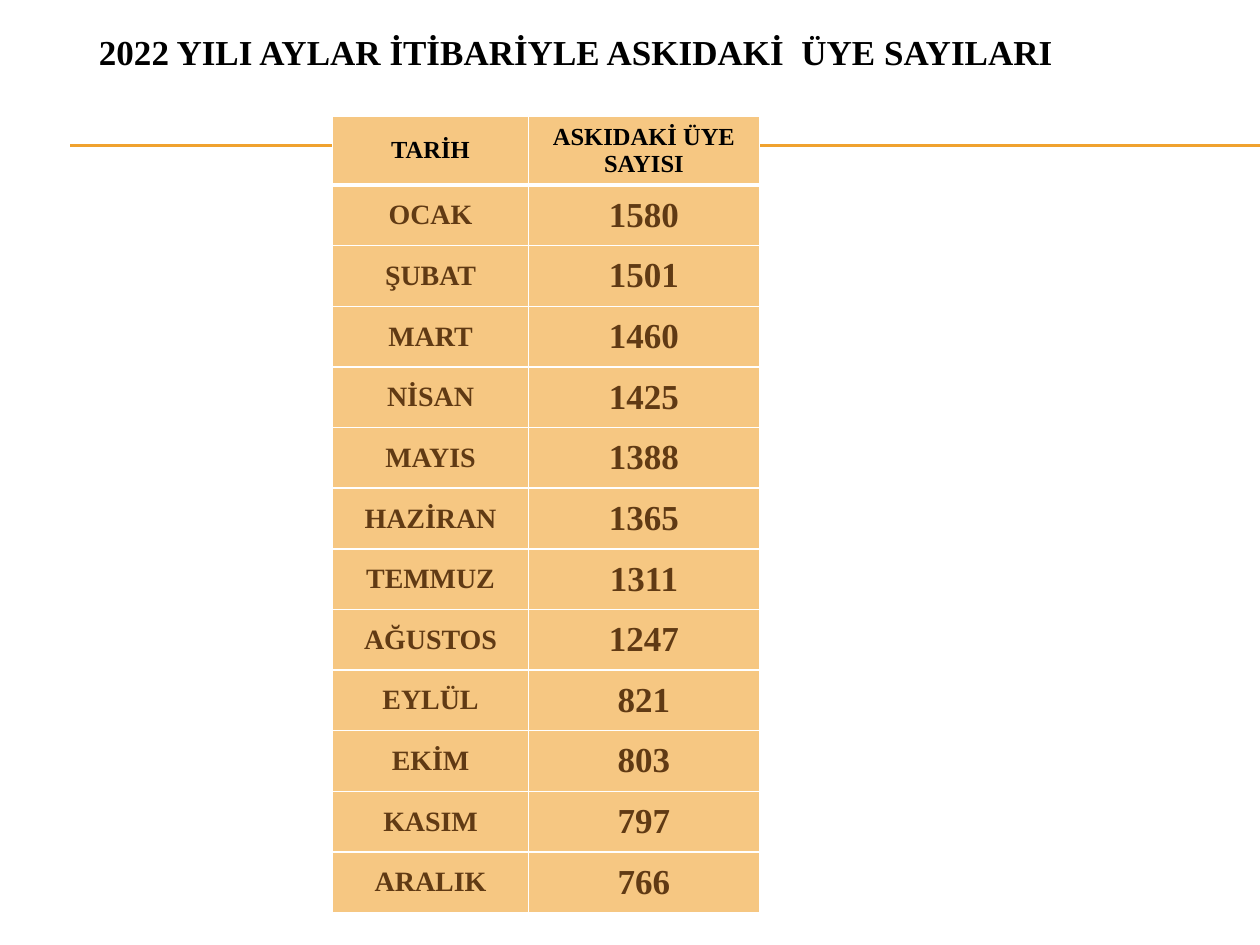
from dataclasses import dataclass
from lxml.etree import SubElement
from pptx import Presentation
from pptx.dml.color import RGBColor as Rgb
from pptx.enum.shapes import MSO_CONNECTOR as Link
from pptx.enum.text import MSO_ANCHOR as Anchor, PP_ALIGN as Align
from pptx.oxml.ns import qn
from pptx.util import Pt

HUES = {"rule": "F0A22E", "cell": "F6C782", "edge": "FFFFFF",
        "head": "000000", "body": "603A14"}
FACE = "Times New Roman"
TITLE = "2022 YILI AYLAR İTİBARİYLE ASKIDAKİ  ÜYE SAYILARI"
HEADS = ("TARİH", "ASKIDAKİ ÜYE SAYISI")
WIDTHS = (111.9, 132)
HEAD_H, ROW_H = 39.6, 34.65


@dataclass
class Month:
    name: str
    count: int


@dataclass
class Rule:
    left: float
    right: float
    top: float


MONTHS = [
    Month("OCAK", 1580), Month("ŞUBAT", 1501), Month("MART", 1460),
    Month("NİSAN", 1425), Month("MAYIS", 1388), Month("HAZİRAN", 1365),
    Month("TEMMUZ", 1311), Month("AĞUSTOS", 1247), Month("EYLÜL", 821),
    Month("EKİM", 803), Month("KASIM", 797), Month("ARALIK", 766),
]
RULES = [Rule(40.3, 720, 82.8), Rule(40.3, 720, 83.5)]


def write(frame, text: str, size: float, hue: str) -> None:
    """Put one centred bold line of text in a frame."""
    para = frame.paragraphs[0]
    para.alignment = Align.CENTER
    run = para.add_run()
    run.text = text
    form = {"name": FACE, "size": Pt(size), "bold": True}
    for key, value in form.items():
        setattr(run.font, key, value)
    run.font.color.rgb = Rgb.from_string(HUES[hue])


def draw_rule(slide, rule: Rule) -> None:
    """Draw a thin level line."""
    line = slide.shapes.add_connector(
        Link.STRAIGHT, Pt(rule.left), Pt(rule.top), Pt(rule.right), Pt(rule.top))
    line.line.width = Pt(0.75)
    line.line.color.rgb = Rgb.from_string(HUES["rule"])
    SubElement(line._element.spPr, qn("a:effectLst"))


def edge(cell, sides: dict[str, float]) -> None:
    """Give a cell its borders, then its fill."""
    props = cell._tc.get_or_add_tcPr()
    for side, width in sides.items():
        line = SubElement(props, qn(f"a:ln{side}"), w=str(Pt(width)))
        fill = SubElement(line, qn("a:solidFill"))
        SubElement(fill, qn("a:srgbClr"), val=HUES["edge"])
    cell.fill.solid()
    cell.fill.fore_color.rgb = Rgb.from_string(HUES["cell"])


def draw_table(slide, months: list[Month]) -> None:
    """Draw the monthly counts below a header row."""
    rows = [HEADS] + [(m.name, str(m.count)) for m in months]
    table = slide.shapes.add_table(
        len(rows), len(WIDTHS), Pt(190.1), Pt(66.2), Pt(sum(WIDTHS)),
        Pt(HEAD_H + ROW_H * len(months))).table
    for col, width in zip(table.columns, WIDTHS):
        col.width = Pt(width)
    for r, texts in enumerate(rows):
        table.rows[r].height = Pt(ROW_H if r else HEAD_H)
        sizes = (16, 20) if r else (14, 14)
        sides = {"L": 1, "R": 1, "T": 3 if r == 1 else 1, "B": 1 if r else 3}
        for c, (text, size) in enumerate(zip(texts, sizes)):
            cell = table.cell(r, c)
            cell.vertical_anchor = Anchor.MIDDLE
            write(cell.text_frame, text, size, "body" if r else "head")
            edge(cell, sides)


def draw_title(slide) -> None:
    """Draw the title box."""
    box = slide.shapes.add_textbox(Pt(20.2), Pt(3.6), Pt(617.8), Pt(51.1))
    frame = box.text_frame
    form = {"word_wrap": True, "vertical_anchor": Anchor.MIDDLE}
    for key, value in form.items():
        setattr(frame, key, value)
    write(frame, TITLE, 20, "head")


def main() -> None:
    """Build and save the slide."""
    deck = Presentation()
    deck.slide_width, deck.slide_height = Pt(720), Pt(540)
    slide = deck.slides.add_slide(deck.slide_layouts[6])
    for rule in RULES:
        draw_rule(slide, rule)
    draw_table(slide, MONTHS)
    draw_title(slide)
    deck.save("out.pptx")


if __name__ == "__main__":
    main()
